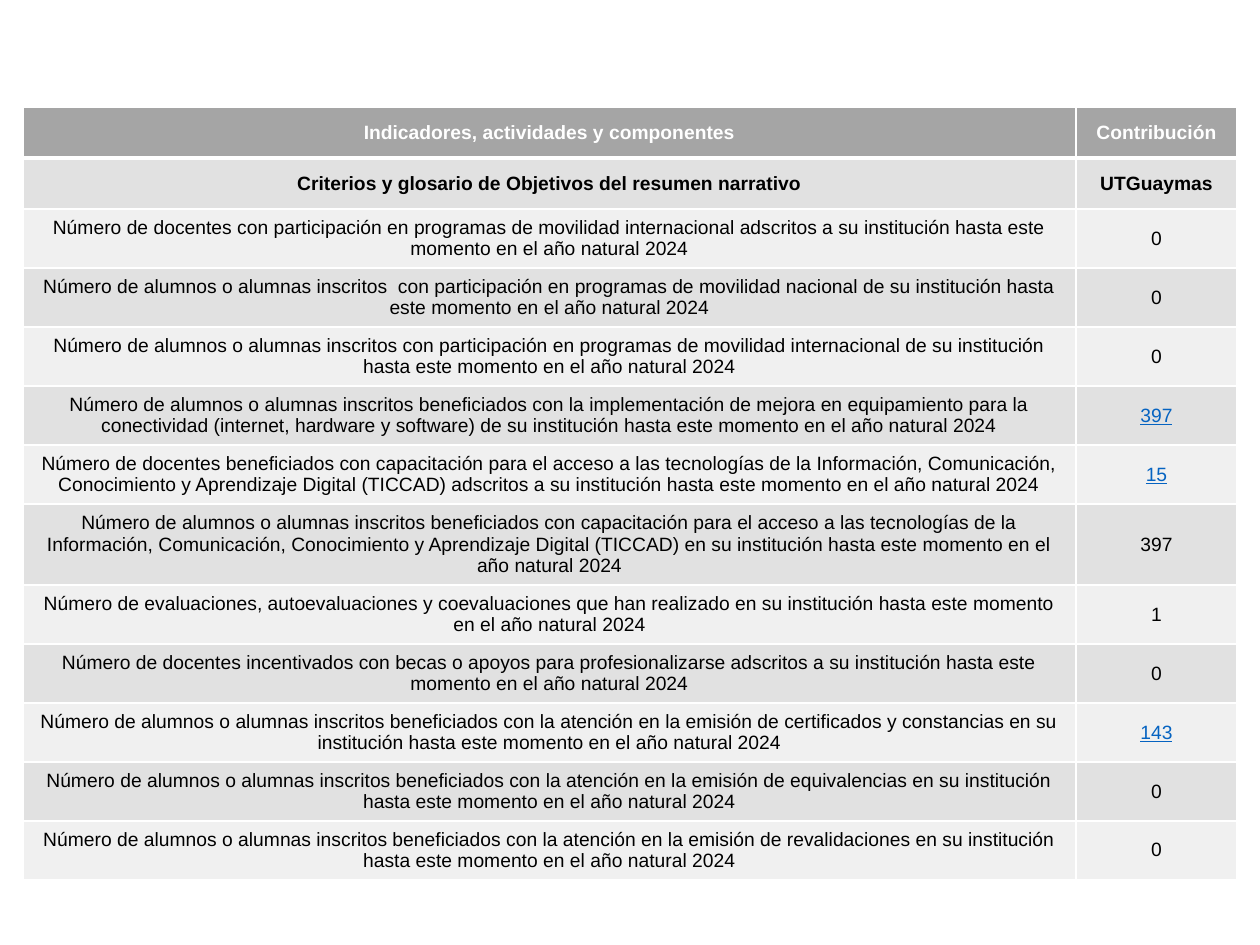
"""Build a slide with the table of institutional indicators and contributions."""
from dataclasses import dataclass

from lxml import etree
from pptx import Presentation
from pptx.dml.color import RGBColor
from pptx.enum.text import MSO_ANCHOR, PP_ALIGN
from pptx.oxml.ns import qn
from pptx.util import Emu, Pt

MIDDLE = MSO_ANCHOR.MIDDLE
CENTER = PP_ALIGN.CENTER
EMU_PER_PX = 914400 / 126
SLIDE_SIZE = (1260, 945)
TABLE_ORIGIN = (23, 107)
COLUMN_WIDTHS = (1053, 161)
TITLE_HEIGHT, TWO_LINE_HEIGHT, THREE_LINE_HEIGHT = 51, 59, 81


@dataclass(frozen=True)
class Theme:
    """Hold the colours, font and sizes of the slide."""
    font: str = "Arial"
    size: int = 11
    header_fill: str = "A5A5A5"
    bands: tuple = ("F0F0F0", "E1E1E1")
    header_text: str = "FFFFFF"
    text: str = "000000"
    link: str = "0563C1"
    border: str = "FFFFFF"
    thin: int = 1
    thick: int = 3


THEME = Theme()

TITLES = [
    ("Indicadores, actividades y componentes", "Contribución"),
    ("Criterios y glosario de Objetivos del resumen narrativo", "UTGuaymas"),
]
INDICATORS = [
    ("Número de docentes con participación en programas de movilidad internacional "
     "adscritos a su institución hasta este momento en el año natural 2024", "0"),
    ("Número de alumnos o alumnas inscritos  con participación en programas de movilidad "
     "nacional de su institución hasta este momento en el año natural 2024", "0"),
    ("Número de alumnos o alumnas inscritos con participación en programas de movilidad "
     "internacional de su institución hasta este momento en el año natural 2024", "0"),
    ("Número de alumnos o alumnas inscritos beneficiados con la implementación de mejora "
     "en equipamiento para la conectividad (internet, hardware y software) de su "
     "institución hasta este momento en el año natural 2024", "397"),
    ("Número de docentes beneficiados con capacitación para el acceso a las tecnologías "
     "de la Información, Comunicación, Conocimiento y Aprendizaje Digital (TICCAD) "
     "adscritos a su institución hasta este momento en el año natural 2024", "15"),
    ("Número de alumnos o alumnas inscritos beneficiados con capacitación para el acceso "
     "a las tecnologías de la Información, Comunicación, Conocimiento y Aprendizaje "
     "Digital (TICCAD) en su institución hasta este momento en el año natural 2024", "397"),
    ("Número de evaluaciones, autoevaluaciones y coevaluaciones que han realizado en su "
     "institución hasta este momento en el año natural 2024", "1"),
    ("Número de docentes incentivados con becas o apoyos para profesionalizarse adscritos "
     "a su institución hasta este momento en el año natural 2024", "0"),
    ("Número de alumnos o alumnas inscritos beneficiados con la atención en la emisión de "
     "certificados y constancias en su institución hasta este momento en el año natural "
     "2024", "143"),
    ("Número de alumnos o alumnas inscritos beneficiados con la atención en la emisión de "
     "equivalencias en su institución hasta este momento en el año natural 2024", "0"),
    ("Número de alumnos o alumnas inscritos beneficiados con la atención en la emisión de "
     "revalidaciones en su institución hasta este momento en el año natural 2024", "0"),
]
LINKED_INDICATORS = {3, 4, 8}
THREE_LINE_INDICATOR = 5


def px(length):
    """Convert whole pixels to EMU."""
    return Emu(round(length * EMU_PER_PX))


def set_borders(cell, row):
    """Draw the cell borders, with a thick rule below the header row."""
    thick_side = {0: "lnB", 1: "lnT"}.get(row)
    properties = cell._tc.get_or_add_tcPr()
    for side in ("lnL", "lnR", "lnT", "lnB"):
        weight = THEME.thick if side == thick_side else THEME.thin
        line = etree.SubElement(properties, qn(f"a:{side}"), w=str(Pt(weight)))
        fill = etree.SubElement(line, qn("a:solidFill"))
        etree.SubElement(fill, qn("a:srgbClr"), val=THEME.border)


def write_cell(cell, text, fill, color, **font_format):
    """Fill a cell and write its centred text."""
    cell.fill.solid()
    cell.fill.fore_color.rgb = RGBColor.from_string(fill)
    cell.vertical_anchor = MIDDLE
    paragraph = cell.text_frame.paragraphs[0]
    paragraph.alignment = CENTER
    run = paragraph.add_run()
    run.text = text
    settings = {"name": THEME.font, "size": Pt(THEME.size), **font_format}
    for attribute, value in settings.items():
        setattr(run.font, attribute, value)
    run.font.color.rgb = RGBColor.from_string(color)


def row_heights():
    """List the height of every row in pixels."""
    return [TITLE_HEIGHT] * len(TITLES) + [
        THREE_LINE_HEIGHT if index == THREE_LINE_INDICATOR else TWO_LINE_HEIGHT
        for index in range(len(INDICATORS))
    ]


def add_indicator_table(slide):
    """Add the table of indicators and contributions."""
    rows = TITLES + INDICATORS
    heights = row_heights()
    bounds = (*TABLE_ORIGIN, sum(COLUMN_WIDTHS), sum(heights))
    table = slide.shapes.add_table(
        len(rows), len(COLUMN_WIDTHS), *map(px, bounds)).table
    for column, width in zip(table.columns, COLUMN_WIDTHS):
        column.width = px(width)
    for row, (texts, height) in enumerate(zip(rows, heights)):
        table.rows[row].height = px(height)
        fill = THEME.bands[row % 2] if row else THEME.header_fill
        for column, text in enumerate(texts):
            linked = column == 1 and row - len(TITLES) in LINKED_INDICATORS
            color = THEME.link if linked else THEME.text if row else THEME.header_text
            cell = table.cell(row, column)
            set_borders(cell, row)
            write_cell(cell, text, fill, color,
                       bold=row < len(TITLES), underline=linked)


def main():
    """Build and save the slide."""
    presentation = Presentation()
    presentation.slide_width, presentation.slide_height = map(px, SLIDE_SIZE)
    slide = presentation.slides.add_slide(presentation.slide_layouts[6])
    add_indicator_table(slide)
    presentation.save("out.pptx")


if __name__ == "__main__":
    main()
